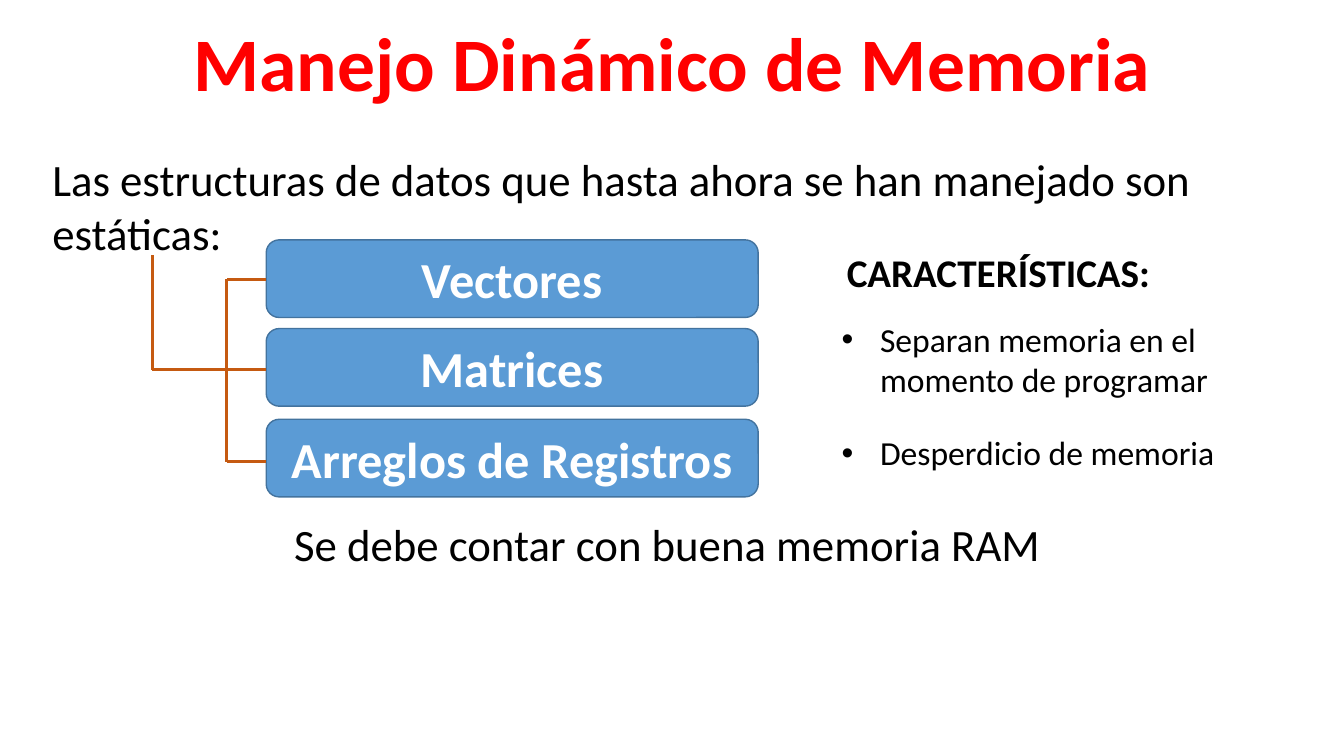
from lxml.etree import SubElement
from pptx import Presentation
from pptx.dml.color import RGBColor
from pptx.enum.shapes import MSO_CONNECTOR, MSO_SHAPE
from pptx.enum.text import MSO_ANCHOR, MSO_AUTO_SIZE, PP_ALIGN
from pptx.oxml import parse_xml
from pptx.oxml.ns import nsdecls, qn
from pptx.util import Inches, Pt

COLORS = {
    "title": "FF0000", "text": "000000", "white": "FFFFFF",
    "box": "5B9BD5", "edge": "43739E", "line": "C55A11",
}

deck = Presentation()
deck.slide_width, deck.slide_height = Inches(13.33), Inches(7.5)
slide = deck.slides.add_slide(deck.slide_layouts[6])


def color(name):
    return RGBColor.from_string(COLORS[name])


def write(shape, text, size, tint="text", bold=False, center=False, bullet=False):
    """Fill a shape with one styled paragraph and return its run."""
    para = shape.text_frame.paragraphs[0]
    para.alignment = PP_ALIGN.CENTER if center else PP_ALIGN.LEFT
    if bullet:
        props = para._p.get_or_add_pPr()
        props.set("marL", str(Inches(0.38)))
        props.set("indent", str(Inches(-0.38)))
        SubElement(props, qn("a:buFont"), typeface="Arial")
        SubElement(props, qn("a:buChar"), char="•")
    run = para.add_run()
    run.text = text
    font = run.font
    font.name, font.size, font.bold = "Calibri", Pt(size), bold
    font.color.rgb = color(tint)
    return run


# Title
title = slide.shapes.add_textbox(Inches(1.77), Inches(0.11), Inches(9.79), Inches(1.01))
title.text_frame.word_wrap = False
title.text_frame.auto_size = MSO_AUTO_SIZE.SHAPE_TO_FIT_TEXT
run = write(title, "Manejo Dinámico de Memoria", 54, "title", bold=True, center=True)
run._r.get_or_add_rPr().insert(0, parse_xml(
    f'<a:ln {nsdecls("a")} w="{Pt(0.75)}"><a:solidFill>'
    f'<a:srgbClr val="{COLORS["white"]}"/></a:solidFill></a:ln>'))

# Body text
texts = [
    (0.42, 1.46, 12.48, 1.18, 32, {},
     "Las estructuras de datos que hasta ahora se han manejado son estáticas:"),
    (8.3, 2.41, 3.88, 0.57, 28, {"bold": True}, "CARACTERÍSTICAS:"),
    (8.25, 3.11, 4.88, 0.91, 24, {"bullet": True},
     "Separan memoria en el momento de programar"),
    (8.25, 4.24, 4.88, 0.5, 24, {"bullet": True}, "Desperdicio de memoria"),
    (1.31, 5.08, 10.72, 0.64, 32, {"center": True},
     "Se debe contar con buena memoria RAM "),
]
for left, top, width, height, size, style, text in texts:
    area = slide.shapes.add_textbox(Inches(left), Inches(top), Inches(width), Inches(height))
    area.text_frame.word_wrap = True
    area.text_frame.auto_size = MSO_AUTO_SIZE.SHAPE_TO_FIT_TEXT
    write(area, text, size, **style)

# Static structures
boxes = [("Vectores", 2.38), ("Matrices", 3.26), ("Arreglos de Registros", 4.16)]
for name, top in boxes:
    box = slide.shapes.add_shape(
        MSO_SHAPE.ROUNDED_RECTANGLE, Inches(2.64), Inches(top), Inches(4.88), Inches(0.77))
    box.shadow.inherit = False
    box.fill.solid()
    box.fill.fore_color.rgb = color("box")
    box.line.color.rgb = color("edge")
    box.line.width = Pt(1)
    box.text_frame.word_wrap = True
    box.text_frame.vertical_anchor = MSO_ANCHOR.MIDDLE
    write(box, name, 36, "white", bold=True, center=True)

# Bracket that joins the text to the boxes
edge, spine, stem = 2.64, 2.25, 1.51
high, mid, low = 2.77, 3.67, 4.58
lines = [
    (edge, high, spine, high),
    (edge, mid, stem, mid),
    (edge, low, spine, low),
    (spine, high, spine, low),
    (stem, mid, stem, 2.53),
]
for ends in lines:
    line = slide.shapes.add_connector(MSO_CONNECTOR.STRAIGHT, *map(Inches, ends))
    line.line.color.rgb = color("line")
    line.line.width = Pt(2.25)
    SubElement(line._element.spPr, qn("a:effectLst"))

deck.save("out.pptx")
